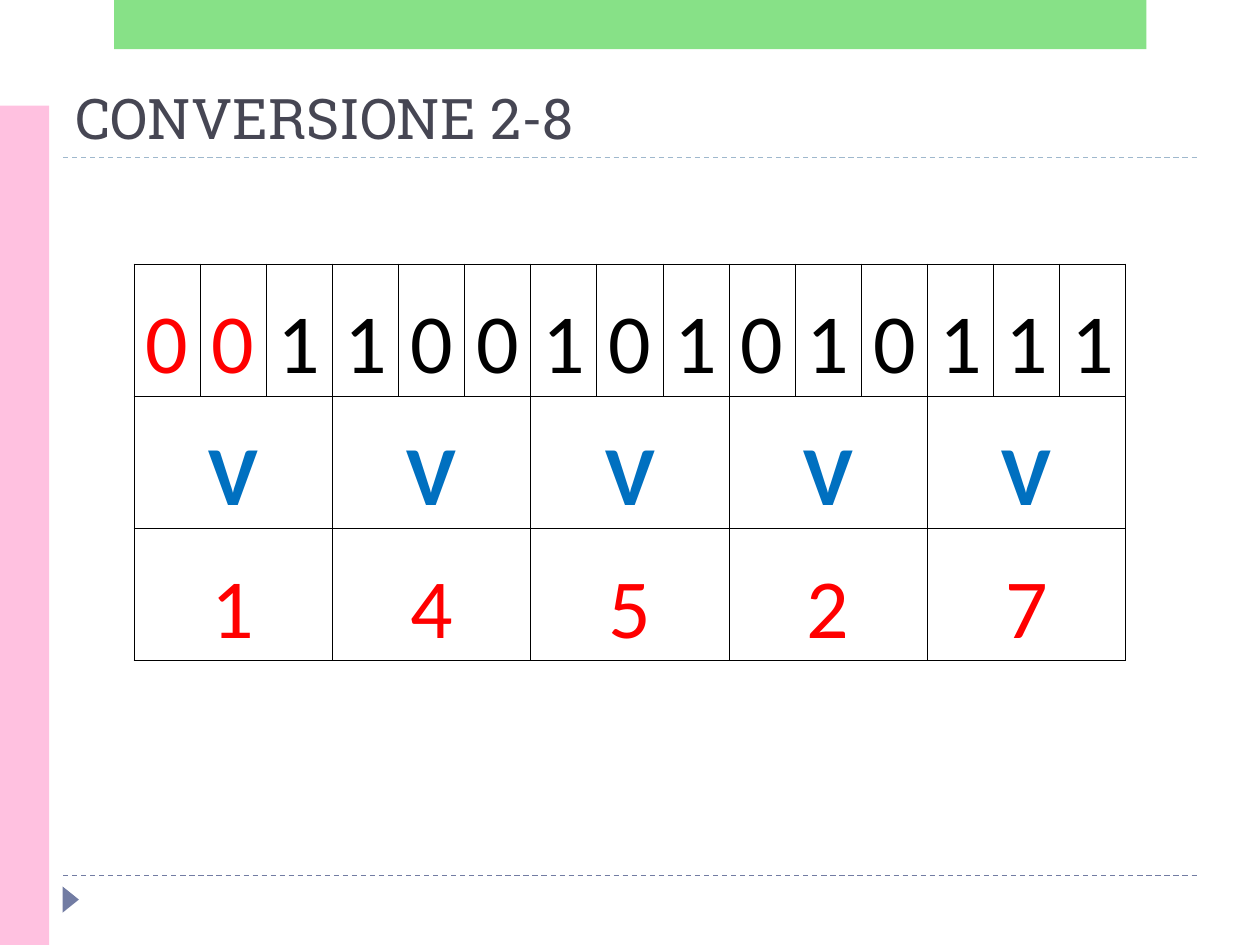
from dataclasses import dataclass

from lxml.etree import SubElement
from pptx import Presentation
from pptx.dml.color import RGBColor
from pptx.enum.dml import MSO_LINE
from pptx.enum.shapes import MSO_CONNECTOR, MSO_SHAPE
from pptx.enum.text import MSO_ANCHOR, PP_ALIGN
from pptx.oxml import parse_xml
from pptx.oxml.ns import nsdecls, qn
from pptx.util import Cm, Pt

BLACK = RGBColor(0x00, 0x00, 0x00)
RED = RGBColor(0xFF, 0x00, 0x00)
BLUE = RGBColor(0x00, 0x70, 0xC0)
SLATE = RGBColor(0x46, 0x46, 0x53)
INDIGO = RGBColor(0x72, 0x7C, 0xA3)
LIGHT_BLUE = RGBColor(0x9F, 0xB8, 0xCD)
PINK = RGBColor(0xFF, 0xC1, 0xE0)
GREEN = RGBColor(0x62, 0xD8, 0x62)

BITS = "001100101010111"
OCTAL = "14527"
PADDING = 2
GROUP = 3


@dataclass
class Block:
    kind: MSO_SHAPE
    left: float
    top: float
    width: float
    height: float
    color: RGBColor
    rotation: int = 0
    opacity: int = 100


@dataclass
class Rule:
    y: float
    color: RGBColor


RULES = [Rule(17.65, INDIGO), Rule(3.18, LIGHT_BLUE)]
BLOCKS = [
    Block(MSO_SHAPE.ISOSCELES_TRIANGLE, 1.16, 17.97, 0.53, 0.33, INDIGO, rotation=90),
    Block(MSO_SHAPE.RECTANGLE, 0, 2.13, 0.99, 16.92, PINK),
    Block(MSO_SHAPE.RECTANGLE, 2.3, 0, 20.81, 0.99, GREEN, opacity=76),
]


def draw_rule(s, rule: Rule) -> None:
    line = s.shapes.add_connector(
        MSO_CONNECTOR.STRAIGHT, Cm(1.27), Cm(rule.y), Cm(24.13), Cm(rule.y))
    line.line.color.rgb = rule.color
    line.line.width = Pt(0.75)
    line.line.dash_style = MSO_LINE.DASH
    SubElement(line._element.spPr, qn("a:effectLst"))


def draw_block(s, block: Block) -> None:
    sp = s.shapes.add_shape(
        block.kind, Cm(block.left), Cm(block.top), Cm(block.width), Cm(block.height))
    sp.shadow.inherit = False
    sp.rotation = block.rotation
    sp.line.fill.background()
    sp.fill.solid()
    sp.fill.fore_color.rgb = block.color
    if block.opacity < 100:
        color = sp._element.spPr.find(qn("a:solidFill"))[0]
        SubElement(color, qn("a:alpha"), val=str(block.opacity * 1000))


def draw_title(s, text: str) -> None:
    tf = s.shapes.add_textbox(Cm(1.27), Cm(1.38), Cm(22.86), Cm(1.78)).text_frame
    tf.word_wrap = True
    tf.vertical_anchor = MSO_ANCHOR.BOTTOM
    tf.text = text
    font = tf.paragraphs[0].runs[0].font
    font.name = "Roboto Slab"
    font.size = Pt(32)
    font.color.rgb = SLATE


def style_cell(cell) -> None:
    cell.fill.background()
    cell.vertical_anchor = MSO_ANCHOR.BOTTOM
    cell.margin_left = cell.margin_right = cell.margin_top = cell.margin_bottom = 0
    tcPr = cell._tc.get_or_add_tcPr()
    for i, side in enumerate("LRTB"):
        tcPr.insert(i, parse_xml(
            f'<a:ln{side} {nsdecls("a")} w="{Pt(0.5)}"><a:solidFill>'
            f'<a:srgbClr val="{BLACK}"/></a:solidFill></a:ln{side}>'))


def write_cell(cell, text: str, color: RGBColor, bold: bool = False) -> None:
    cell.text_frame.text = text
    p = cell.text_frame.paragraphs[0]
    p.alignment = PP_ALIGN.CENTER
    font = p.runs[0].font
    font.name = "Calibri"
    font.size = Pt(48)
    font.bold = bold
    font.color.rgb = color


def draw_conversion(s) -> None:
    table = s.shapes.add_table(
        3, len(BITS), Cm(2.7), Cm(5.32), Cm(20), Cm(8)).table
    table.first_row = table.horz_banding = False
    for cell in table.iter_cells():
        style_cell(cell)
    for col, bit in enumerate(BITS):
        write_cell(table.cell(0, col), bit, RED if col < PADDING else BLACK)
    for i, digit in enumerate(OCTAL):
        first = i * GROUP
        for row in (1, 2):
            table.cell(row, first).merge(table.cell(row, first + GROUP - 1))
        write_cell(table.cell(1, first), "V", BLUE, bold=True)
        write_cell(table.cell(2, first), digit, RED)


def main() -> None:
    prs = Presentation()
    prs.slide_width, prs.slide_height = Cm(25.4), Cm(19.05)
    s = prs.slides.add_slide(prs.slide_layouts[6])
    for rule in RULES:
        draw_rule(s, rule)
    for block in BLOCKS:
        draw_block(s, block)
    draw_title(s, "CONVERSIONE 2-8")
    draw_conversion(s)
    prs.save("out.pptx")


if __name__ == "__main__":
    main()
